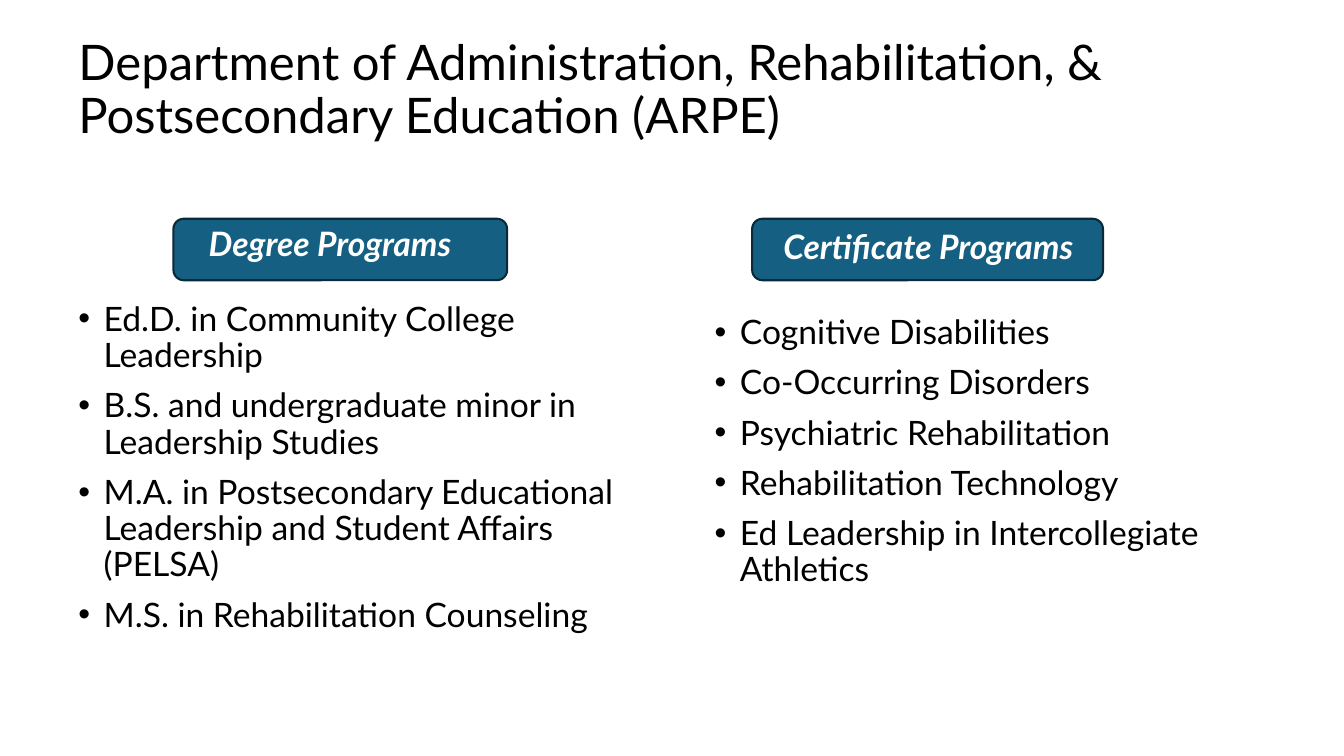
from dataclasses import dataclass

from lxml import etree
from pptx import Presentation
from pptx import util as u
from pptx.dml.color import RGBColor
from pptx.enum import shapes, text
from pptx.oxml.ns import qn

PX = 9144  # EMU per px, 100 px to the inch


@dataclass(frozen=True)
class Theme:
    font: str = "Lato"
    ink: str = "000000"
    light: str = "FFFFFF"
    fill: str = "156082"
    edge: str = "092A39"
    title: int = 35
    body: int = 24
    gap: int = 10
    lead: float = 0.9


T = Theme()


def px(*nums):
    return [u.Emu(n * PX) for n in nums]


def rgb(code):
    return RGBColor.from_string(code)


def bullet(par):
    props = par._p.get_or_add_pPr()
    props.set("marL", str(25 * PX))
    props.set("indent", str(-25 * PX))
    etree.SubElement(props, qn("a:buFont"), typeface="Arial")
    etree.SubElement(props, qn("a:buChar"), char="•")


def write(slide, box, lines, size=T.body, color=T.ink, bold=False,
          italic=False, anchor="TOP", dots=False):
    frame = slide.shapes.add_textbox(*px(*box)).text_frame
    frame.word_wrap = True
    frame.vertical_anchor = getattr(text.MSO_ANCHOR, anchor)
    for i, line in enumerate(lines):
        par = frame.add_paragraph() if i else frame.paragraphs[0]
        par.line_spacing = T.lead
        par.space_before = u.Pt(T.gap if i else 0)
        if dots:
            bullet(par)
        run = par.add_run()
        run.text = line
        font = run.font
        font.name, font.size = T.font, u.Pt(size)
        font.bold, font.italic = bold, italic
        font.color.rgb = rgb(color)


def badge(slide, box, label, inset):
    """Rounded plate with its label set in from the plate's left and top."""
    x, y, w, h = box
    plate = slide.shapes.add_shape(
        shapes.MSO_SHAPE.ROUNDED_RECTANGLE, *px(*box))
    plate.shadow.inherit = False
    plate.fill.solid()
    plate.fill.fore_color.rgb = rgb(T.fill)
    plate.line.color.rgb = rgb(T.edge)
    plate.line.width = u.Pt(1.5)
    dx, dy = inset
    write(slide, (x + dx, y + dy, w, 46), [label], color=T.light,
          bold=True, italic=True, anchor="BOTTOM")


def column(slide, box, label, items, plate, inset, drop):
    """Badge on top; plate is its offset and width, drop the list's offset."""
    x, y, w, h = box
    dx, wide = plate
    badge(slide, (x + dx, y, wide, 61), label, inset)
    write(slide, (x, y + drop, w, h - drop), items, dots=True)


def main():
    deck = Presentation()
    deck.slide_width, deck.slide_height = px(1333, 750)
    slide = deck.slides.add_slide(deck.slide_layouts[6])
    write(slide, (68, 29, 1119, 119),
          ["Department of Administration, Rehabilitation, & "
           "Postsecondary Education (ARPE)"],
          size=T.title, anchor="BOTTOM")
    column(slide, (68, 217, 579, 444), "Degree Programs", [
        "Ed.D. in Community College Leadership",
        "B.S. and undergraduate minor in Leadership Studies",
        "M.A. in Postsecondary Educational Leadership and "
        "Student Affairs (PELSA)",
        "M.S. in Rehabilitation Counseling",
    ], plate=(104, 331), inset=(25, 4), drop=78)
    column(slide, (699, 217, 500, 406), "Certificate Programs", [
        "Cognitive Disabilities",
        "Co-Occurring Disorders",
        "Psychiatric Rehabilitation",
        "Rehabilitation Technology",
        "Ed Leadership in Intercollegiate Athletics",
    ], plate=(47, 348), inset=(21, 7), drop=91)
    deck.save("out.pptx")


if __name__ == "__main__":
    main()
